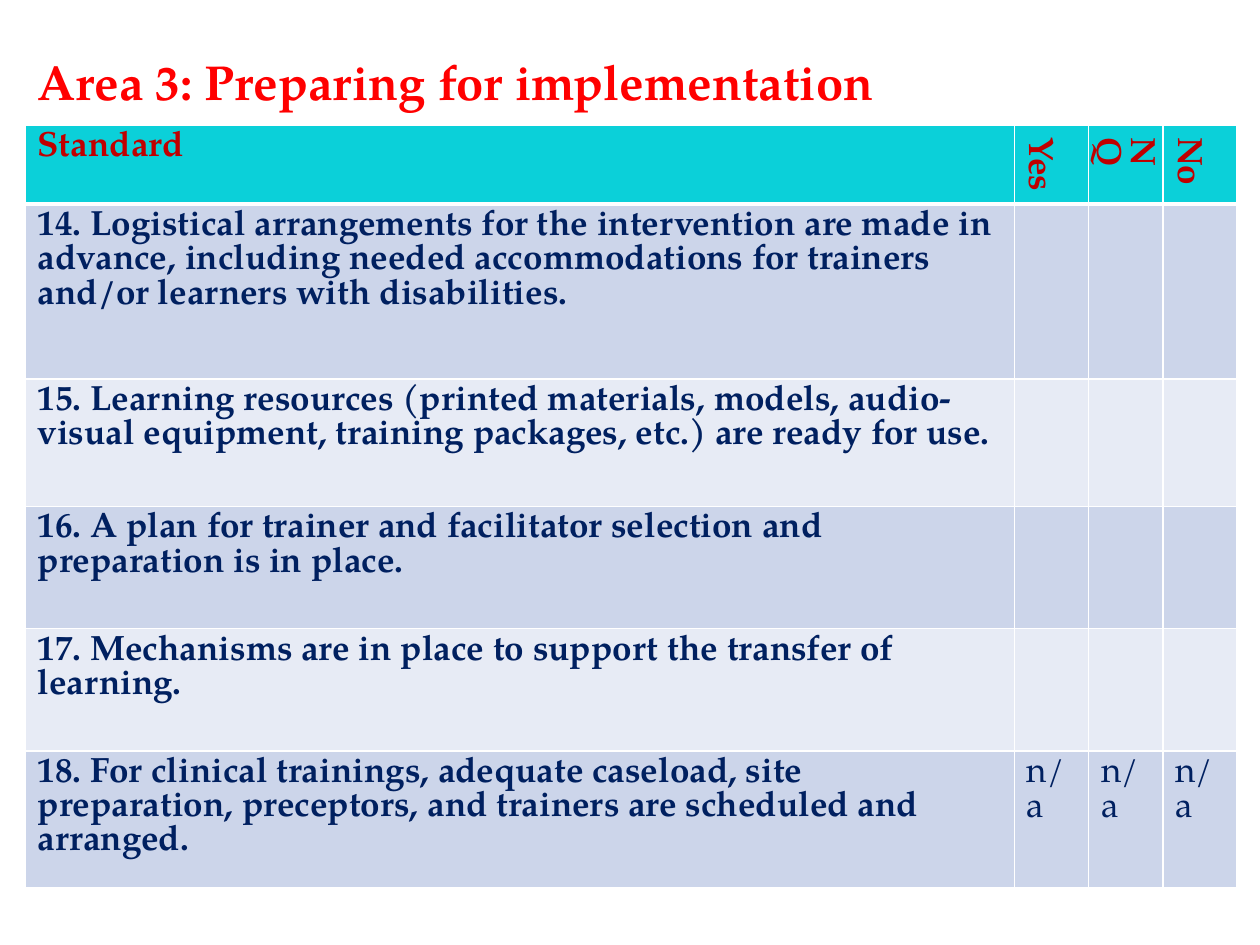
from dataclasses import dataclass

from lxml.etree import SubElement
from pptx import Presentation
from pptx.dml.color import RGBColor
from pptx.oxml.ns import qn
from pptx.util import Inches, Pt


@dataclass(frozen=True)
class Theme:
    font: str = "TeX Gyre Pagella"
    title: str = "FF0000"
    header_text: str = "C00000"
    body_text: str = "002060"
    header_fill: str = "0BD0D9"
    bands: tuple = ("CCD5EA", "E7EBF5")
    border: str = "FFFFFF"
    title_size: int = 28
    body_size: int = 20


THEME = Theme()
COLUMNS = [7.85, 0.59, 0.59, 0.59]
ROW_HEIGHTS = [0.63, 1.39, 1.01, 0.97, 0.97, 1.09]
HEADERS = ["Standard", "Yes", "NQ", "No"]
STANDARDS = [
    ("14. Logistical arrangements for the intervention are made in advance, "
     "including needed accommodations for trainers and/or learners with disabilities.", ""),
    ("15. Learning resources (printed materials, models, audio-visual equipment, "
     "training packages, etc.) are ready for use.", ""),
    ("16. A plan for trainer and facilitator selection and preparation is in place.", ""),
    ("17. Mechanisms are in place to support the transfer of learning.", ""),
    ("18. For clinical trainings, adequate caseload, site preparation, preceptors, "
     "and trainers are scheduled and arranged.", "n/a"),
]


def add_run(p, text, size, color, bold=True):
    r = p.add_run()
    r.text = text
    r.font.name = THEME.font
    r.font.size = Pt(size)
    r.font.bold = bold
    r.font.color.rgb = RGBColor.from_string(color)


def add_title(s, text):
    sp = s.shapes.add_textbox(Inches(0.2), Inches(0.36), Inches(9.61), Inches(0.57))
    tf = sp.text_frame
    tf.word_wrap = True
    add_run(tf.paragraphs[0], text, THEME.title_size, THEME.title)


def set_borders(cell, bottom=1):
    """Draw all four cell edges; must run before the cell is filled."""
    props = cell._tc.get_or_add_tcPr()
    for edge, width in (("L", 1), ("R", 1), ("T", 1), ("B", bottom)):
        line = SubElement(props, qn(f"a:ln{edge}"), w=str(Pt(width)))
        fill = SubElement(line, qn("a:solidFill"))
        SubElement(fill, qn("a:srgbClr"), val=THEME.border)


def style_cell(cell, text, color, fill, bold=True, bottom=1):
    set_borders(cell, bottom)
    cell.fill.solid()
    cell.fill.fore_color.rgb = RGBColor.from_string(fill)
    p = cell.text_frame.paragraphs[0]
    p.font.size = Pt(THEME.body_size)
    if text:
        add_run(p, text, THEME.body_size, color, bold)


def add_standards_table(s):
    table = s.shapes.add_table(
        len(ROW_HEIGHTS), len(COLUMNS), Inches(0.2), Inches(0.99),
        Inches(sum(COLUMNS)), Inches(sum(ROW_HEIGHTS))).table
    for column, width in zip(table.columns, COLUMNS):
        column.width = Inches(width)
    for row, height in zip(table.rows, ROW_HEIGHTS):
        row.height = Inches(height)

    for col, text in enumerate(HEADERS):
        cell = table.cell(0, col)
        style_cell(cell, text, THEME.header_text, THEME.header_fill, bottom=3)
        if col:
            cell._tc.get_or_add_tcPr().set("vert", "vert")

    for row, (standard, answer) in enumerate(STANDARDS, start=1):
        fill = THEME.bands[(row - 1) % 2]
        for col, text in enumerate([standard] + [answer] * 3):
            style_cell(table.cell(row, col), text, THEME.body_text, fill, bold=col == 0)


def main():
    prs = Presentation()
    prs.slide_width, prs.slide_height = Inches(10), Inches(7.5)
    s = prs.slides.add_slide(prs.slide_layouts[6])
    add_standards_table(s)
    add_title(s, "Area 3: Preparing for implementation")
    prs.save("out.pptx")


if __name__ == "__main__":
    main()
